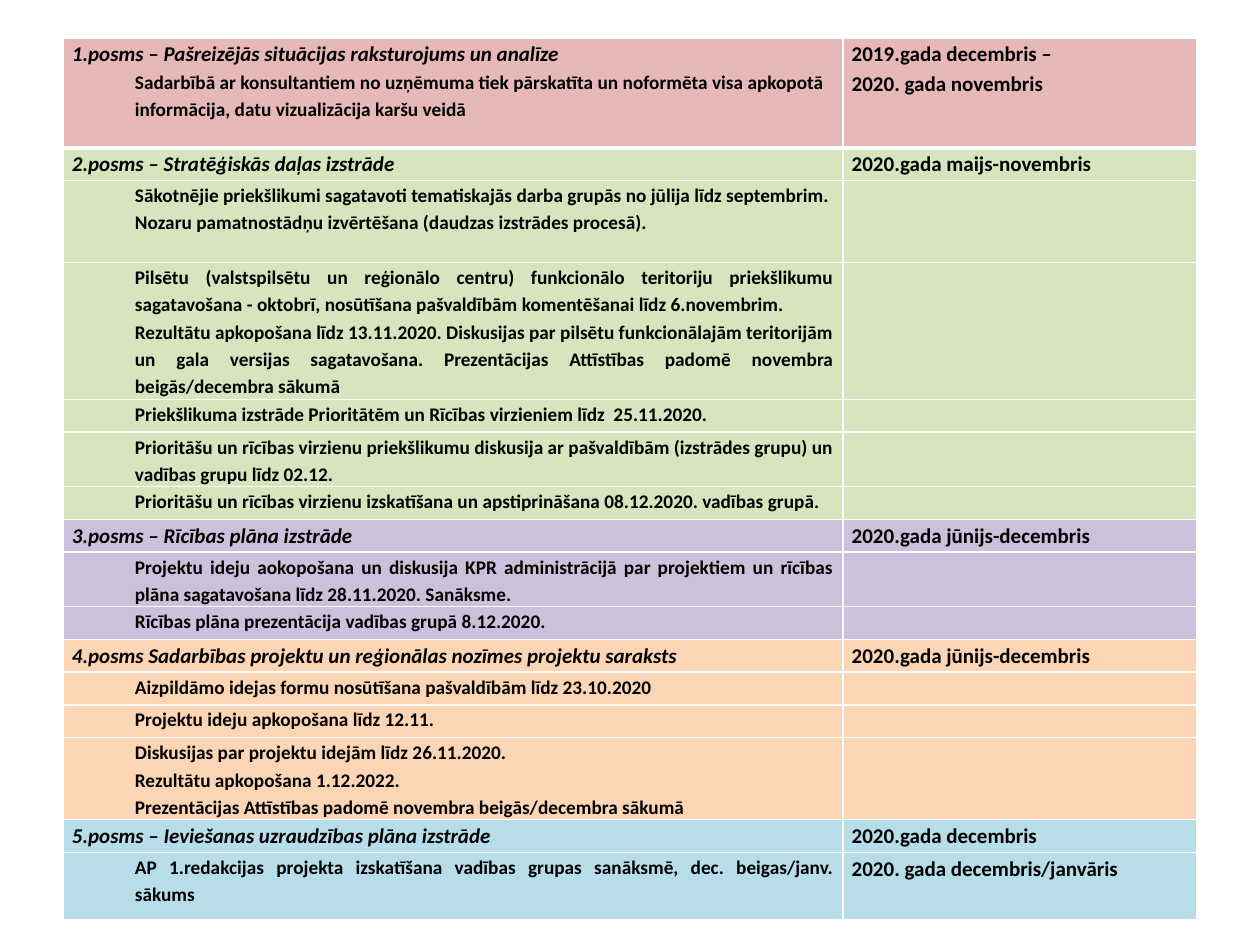
from lxml import etree
from pptx import Presentation
from pptx.dml.color import RGBColor
from pptx.enum.text import PP_ALIGN
from pptx.oxml.ns import qn
from pptx.util import Cm, Pt

LEFT, JUSTIFY = PP_ALIGN.LEFT, PP_ALIGN.JUSTIFY

THEME = {
    "font": "Calibri", "text": "000000", "border": "FFFFFF",
    "heading_size": 12, "detail_size": 11,
    "border_width": 1, "divider_width": 3,
    "analysis": "E6B9B8", "strategy": "D7E4BD", "actions": "CCC1DA",
    "projects": "FCD5B5", "monitoring": "B7DEE8",
}
ONE_LINE, TWO_LINES, THREE_LINES = 0.66, 1.1, 1.65

# Each row: fill, height in cm, heading, detail paragraphs, dates
ROWS = [
    ("analysis", 2.21, "1.posms – Pašreizējās situācijas raksturojums un analīze",
     ["Sadarbībā ar konsultantiem no uzņēmuma tiek pārskatīta un noformēta visa apkopotā "
      "informācija, datu vizualizācija karšu veidā"],
     ["2019.gada decembris –", "2020. gada novembris"]),
    ("strategy", ONE_LINE, "2.posms – Stratēģiskās daļas izstrāde", [],
     ["2020.gada maijs-novembris"]),
    ("strategy", THREE_LINES, None,
     ["Sākotnējie priekšlikumi sagatavoti tematiskajās darba grupās no jūlija līdz septembrim.",
      "Nozaru pamatnostādņu izvērtēšana (daudzas izstrādes procesā)."], []),
    ("strategy", 2.76, None,
     ["Pilsētu (valstspilsētu un reģionālo centru) funkcionālo teritoriju priekšlikumu "
      "sagatavošana - oktobrī, nosūtīšana pašvaldībām komentēšanai līdz 6.novembrim.",
      "Rezultātu apkopošana līdz 13.11.2020. Diskusijas par pilsētu funkcionālajām "
      "teritorijām un gala versijas sagatavošana. Prezentācijas Attīstības padomē novembra "
      "beigās/decembra sākumā"], []),
    ("strategy", ONE_LINE, None,
     ["Priekšlikuma izstrāde Prioritātēm un Rīcības virzieniem līdz  25.11.2020."], []),
    ("strategy", TWO_LINES, None,
     ["Prioritāšu un rīcības virzienu priekšlikumu diskusija ar pašvaldībām (izstrādes grupu) "
      "un vadības grupu līdz 02.12."], []),
    ("strategy", ONE_LINE, None,
     ["Prioritāšu un rīcības virzienu izskatīšana un apstiprināšana 08.12.2020. vadības grupā."],
     []),
    ("actions", ONE_LINE, "3.posms – Rīcības plāna izstrāde", [],
     ["2020.gada jūnijs-decembris"]),
    ("actions", TWO_LINES, None,
     ["Projektu ideju aokopošana un diskusija KPR administrācijā par projektiem un rīcības "
      "plāna sagatavošana līdz 28.11.2020. Sanāksme."], []),
    ("actions", ONE_LINE, None, ["Rīcības plāna prezentācija vadības grupā 8.12.2020."], []),
    ("projects", ONE_LINE,
     "4.posms Sadarbības projektu un reģionālas nozīmes projektu saraksts", [],
     ["2020.gada jūnijs-decembris"]),
    ("projects", ONE_LINE, None,
     ["Aizpildāmo idejas formu nosūtīšana pašvaldībām līdz 23.10.2020"], []),
    ("projects", ONE_LINE, None, ["Projektu ideju apkopošana līdz 12.11."], []),
    ("projects", THREE_LINES, None,
     ["Diskusijas par projektu idejām līdz 26.11.2020.",
      "Rezultātu apkopošana 1.12.2022.",
      "Prezentācijas Attīstības padomē novembra beigās/decembra sākumā"], []),
    ("monitoring", ONE_LINE, "5.posms – Ieviešanas uzraudzības plāna izstrāde", [],
     ["2020.gada decembris"]),
    ("monitoring", 1.35, None,
     ["AP 1.redakcijas projekta izskatīšana vadības grupas sanāksmē, dec. beigas/janv. sākums"],
     ["2020. gada decembris/janvāris"]),
]


def style_cell(cell, fill, row_index):
    """Set margins, borders and fill; the first row ends in a thick divider."""
    margins = {"margin_left": Cm(0.18), "margin_right": Cm(0.18),
               "margin_top": 0, "margin_bottom": 0}
    for name, value in margins.items():
        setattr(cell, name, value)
    properties = cell._tc.get_or_add_tcPr()
    for side in ("L", "R", "T", "B"):
        is_divider = (row_index, side) in ((0, "B"), (1, "T"))
        width = THEME["divider_width" if is_divider else "border_width"]
        line = etree.SubElement(properties, qn(f"a:ln{side}"), w=str(Pt(width)))
        solid = etree.SubElement(line, qn("a:solidFill"))
        etree.SubElement(solid, qn("a:srgbClr"), val=THEME["border"])
    cell.fill.solid()
    cell.fill.fore_color.rgb = RGBColor.from_string(THEME[fill])


def write_cell(cell, entries):
    """Write (text, size name, italic, indented, alignment) entries as paragraphs."""
    frame = cell.text_frame
    for index, (text, size, italic, indented, alignment) in enumerate(entries):
        paragraph = frame.add_paragraph() if index else frame.paragraphs[0]
        paragraph.alignment = alignment
        paragraph.line_spacing = 1.15
        if indented:
            paragraph.level = 1
            properties = paragraph._p.get_or_add_pPr()
            properties.set("marL", str(Cm(1.27)))
            properties.set("indent", "0")
        run = paragraph.add_run()
        run.text = text
        formats = {"name": THEME["font"], "size": Pt(THEME[size]), "bold": True,
                   "italic": italic}
        for name, value in formats.items():
            setattr(run.font, name, value)
        run.font.color.rgb = RGBColor.from_string(THEME["text"])
    if not entries:
        etree.SubElement(frame.paragraphs[0]._p, qn("a:endParaRPr"),
                         sz=str(THEME["detail_size"] * 100))


presentation = Presentation()
presentation.slide_width, presentation.slide_height = Cm(25.4), Cm(19.05)
slide = presentation.slides.add_slide(presentation.slide_layouts[6])

table_height = sum(row[1] for row in ROWS)
table = slide.shapes.add_table(len(ROWS), 2, Cm(1.27), Cm(0.77),
                               Cm(22.86), Cm(table_height)).table
table.first_row = table.horz_banding = False
for column, width in zip(table.columns, (15.72, 7.14)):
    column.width = Cm(width)

for row_index, (fill, height, heading, details, dates) in enumerate(ROWS):
    table.rows[row_index].height = Cm(height)
    alignment = JUSTIFY if row_index else LEFT
    stage = [(heading, "heading_size", True, False, alignment)] if heading else []
    stage += [(text, "detail_size", False, True, alignment) for text in details]
    period = [(text, "heading_size", False, False, LEFT) for text in dates]
    for column_index, entries in enumerate((stage, period)):
        cell = table.cell(row_index, column_index)
        style_cell(cell, fill, row_index)
        write_cell(cell, entries)

presentation.save("out.pptx")
